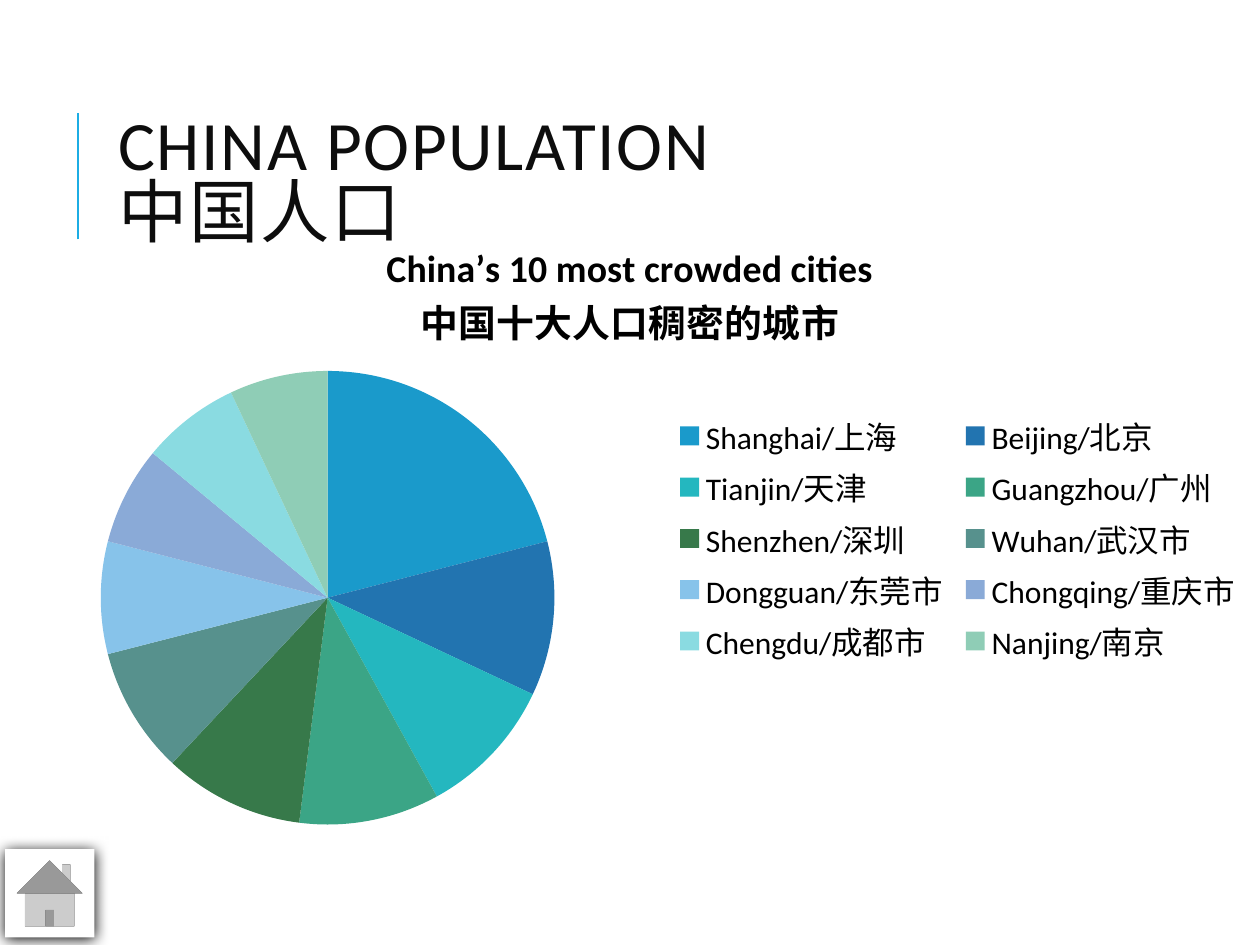
from lxml.etree import SubElement
from pptx import Presentation
from pptx.chart.data import CategoryChartData
from pptx.dml.color import RGBColor
from pptx.enum.chart import XL_CHART_TYPE, XL_LEGEND_POSITION
from pptx.enum.shapes import MSO_CONNECTOR, MSO_SHAPE
from pptx.enum.text import MSO_ANCHOR
from pptx.oxml import parse_xml
from pptx.oxml.ns import nsdecls, qn
from pptx.util import Pt

FONT = "Calibri"
WHITE = RGBColor(0xFF, 0xFF, 0xFF)
BLACK = RGBColor(0x00, 0x00, 0x00)
TITLE_COLOR = RGBColor(0x0D, 0x0D, 0x0D)
ACCENT = RGBColor(0x1C, 0xAD, 0xE4)

# City, share of the total, slice colour
CITIES = [
    ("Shanghai/上海", 21, RGBColor(0x1A, 0x9A, 0xCB)),
    ("Beijing/北京", 11, RGBColor(0x22, 0x74, 0xB0)),
    ("Tianjin/天津", 10, RGBColor(0x24, 0xB7, 0xBF)),
    ("Guangzhou/广州", 10, RGBColor(0x3B, 0xA5, 0x86)),
    ("Shenzhen/深圳", 10, RGBColor(0x37, 0x79, 0x4A)),
    ("Wuhan/武汉市", 9, RGBColor(0x57, 0x91, 0x8D)),
    ("Dongguan/东莞市", 8, RGBColor(0x87, 0xC3, 0xEA)),
    ("Chongqing/重庆市", 7, RGBColor(0x8A, 0xAA, 0xD7)),
    ("Chengdu/成都市", 7, RGBColor(0x8A, 0xDB, 0xE1)),
    ("Nanjing/南京", 7, RGBColor(0x8F, 0xCD, 0xB6)),
]


def set_font(font, size, color, bold=False):
    font.name, font.size, font.bold = FONT, Pt(size), bold
    font.color.rgb = color


def manual_layout(x, y, width, height, inner=False):
    """Chart layout in fractions of the chart area."""
    layout = parse_xml(f"<c:layout {nsdecls('c')}><c:manualLayout/></c:layout>")
    values = [("xMode", "edge"), ("yMode", "edge"),
              ("x", x), ("y", y), ("w", width), ("h", height)]
    if inner:
        values.insert(0, ("layoutTarget", "inner"))
    for tag, value in values:
        SubElement(layout[0], qn(f"c:{tag}")).set("val", str(value))
    return layout


class SlideBuilder:
    def __init__(self, slide):
        self.shapes = slide.shapes

    def line(self, x1, y1, x2, y2):
        connector = self.shapes.add_connector(
            MSO_CONNECTOR.STRAIGHT, Pt(x1), Pt(y1), Pt(x2), Pt(y2))
        connector.line.color.rgb = ACCENT
        connector.line.width = Pt(1.5)
        SubElement(connector._element.spPr, qn("a:effectLst"))

    def title(self, text, left, top, width, height):
        box = self.shapes.add_textbox(Pt(left), Pt(top), Pt(width), Pt(height))
        frame = box.text_frame
        frame.word_wrap = True
        frame.vertical_anchor = MSO_ANCHOR.MIDDLE
        paragraph = frame.paragraphs[0]
        paragraph.text = text
        paragraph.line_spacing = 0.8
        set_font(paragraph.font, 39.6, TITLE_COLOR)
        for run in paragraph.runs:
            run._r.get_or_add_rPr().set("spc", "100")

    def pie(self, title_lines, left, top, width, height):
        data = CategoryChartData()
        data.categories = [name for name, _, _ in CITIES]
        data.add_series("Series 1", [share for _, share, _ in CITIES])
        chart = self.shapes.add_chart(
            XL_CHART_TYPE.PIE, Pt(left), Pt(top), Pt(width), Pt(height), data).chart
        set_font(chart.font, 18, BLACK)

        # Chart title
        chart.has_title = True
        frame = chart.chart_title.text_frame
        frame.text = "\n".join(title_lines)
        for paragraph in frame.paragraphs:
            set_font(paragraph.font, 21.6, BLACK, bold=True)
        chart.chart_title.include_in_layout = False

        # Slices
        plot = chart.plots[0]
        plot.vary_by_categories = True
        for index, (_, _, color) in enumerate(CITIES):
            fill = plot.series[0].points[index].format.fill
            fill.solid()
            fill.fore_color.rgb = color

        # Legend and plot positions
        chart.has_legend = True
        legend = chart.legend
        legend.position = XL_LEGEND_POSITION.RIGHT
        legend.include_in_layout = False
        set_font(legend.font, 18, BLACK)
        legend._element.find(qn("c:legendPos")).addnext(
            manual_layout(0.53, 0.3, 0.46, 0.42))
        plot_area = chart._chartSpace.chart.plotArea
        for old_layout in plot_area.findall(qn("c:layout")):
            plot_area.remove(old_layout)
        plot_area.insert(0, manual_layout(0.08, 0.24, 0.36, 0.73, inner=True))

    def home_button(self, left, top, width, height):
        shape = self.shapes.add_shape(
            MSO_SHAPE.ACTION_BUTTON_HOME, Pt(left), Pt(top), Pt(width), Pt(height))
        shape.fill.solid()
        shape.fill.fore_color.rgb = WHITE
        shape.line.fill.background()
        shape.shadow.inherit = False
        effects = shape._element.spPr.find(qn("a:effectLst"))
        effects.append(parse_xml(
            f'<a:outerShdw {nsdecls("a")} blurRad="{Pt(8.5)}" dist="{Pt(1)}" '
            'dir="5400000" algn="t" rotWithShape="0">'
            '<a:srgbClr val="000000"/></a:outerShdw>'))


def main():
    presentation = Presentation()
    presentation.slide_width, presentation.slide_height = Pt(720), Pt(540)
    builder = SlideBuilder(presentation.slides.add_slide(presentation.slide_layouts[6]))

    # Heading
    builder.line(44.64, 136.8, 44.64, 64.8)
    builder.title("CHINA POPULATION\v中国人口", 60.5, 46, 574, 118)

    # Population chart
    builder.pie(["China’s 10 most crowded cities", "中国十大人口稠密的城市"],
                0, 126, 720, 356.4)

    # Navigation
    builder.home_button(2.9, 485.3, 51, 50.4)

    presentation.save("out.pptx")


if __name__ == "__main__":
    main()
